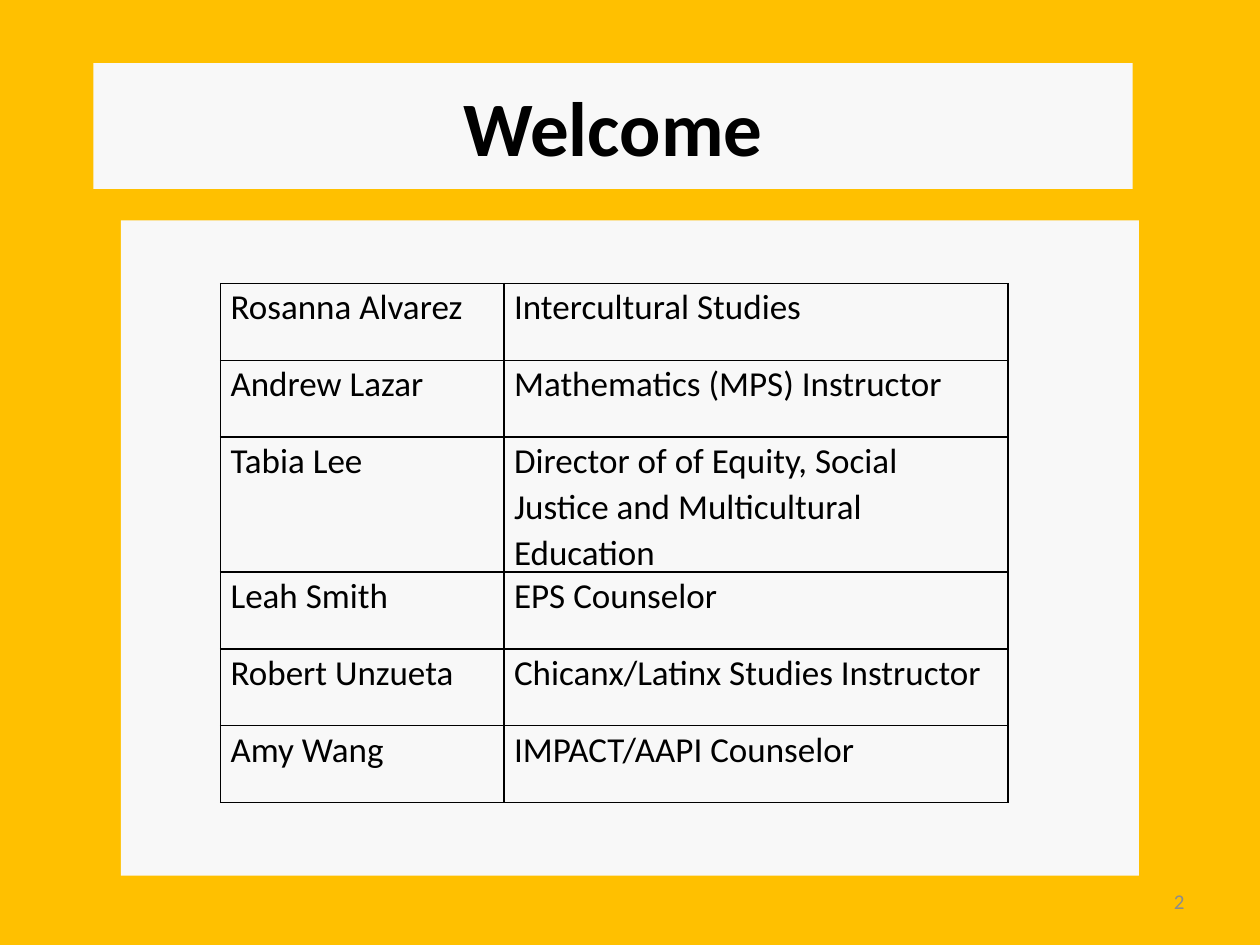
from lxml import etree
from pptx import Presentation
from pptx.dml.color import RGBColor
from pptx.enum import shapes, text
from pptx.oxml import ns
from pptx.util import Inches, Pt

THEME = {
    "font": "Calibri",
    "background": RGBColor.from_string("FFC000"),
    "panel": RGBColor.from_string("F8F8F8"),
    "ink": RGBColor.from_string("000000"),
    "muted": RGBColor.from_string("8C8C8C"),
    "title": Pt(44),
    "body": Pt(20),
    "number": Pt(12),
}


def write(frame, words, size, color="ink", align=text.PP_ALIGN.LEFT, bold=False, spacing=None):
    para = frame.paragraphs[0]
    para.alignment = align
    para.line_spacing = spacing
    span = para.add_run()
    span.text = words
    span.font.name = THEME["font"]
    span.font.size = THEME[size]
    span.font.bold = bold
    span.font.color.rgb = THEME[color]


def add_borders(cell, color, width):
    properties = cell._tc.get_or_add_tcPr()
    for position, side in enumerate(("lnL", "lnR", "lnT", "lnB")):
        line = etree.Element(ns.qn(f"a:{side}"), w=str(width))
        fill = etree.SubElement(line, ns.qn("a:solidFill"))
        etree.SubElement(fill, ns.qn("a:srgbClr"), val=str(color))
        properties.insert(position, line)


deck = Presentation()
deck.slide_width, deck.slide_height = Inches(10), Inches(7.5)
page = deck.slides.add_slide(deck.slide_layouts[5])
page.background.fill.solid()
page.background.fill.fore_color.rgb = THEME["background"]

number = page.shapes.add_textbox(Inches(7.17), Inches(6.95), Inches(2.33), Inches(0.4))
number.text_frame.word_wrap = True
number.text_frame.vertical_anchor = text.MSO_ANCHOR.MIDDLE
write(number.text_frame, "2", "number", color="muted", align=text.PP_ALIGN.RIGHT)

panel = page.shapes.add_shape(
    shapes.MSO_SHAPE.RECTANGLE, Inches(0.96), Inches(1.75), Inches(8.08), Inches(5.2))
panel.shadow.inherit = False
panel.fill.solid()
panel.fill.fore_color.rgb = THEME["panel"]
panel.line.fill.background()

title = page.shapes.title
title.left, title.top, title.width, title.height = Inches(0.74), Inches(0.5), Inches(8.25), Inches(1)
title.fill.solid()
title.fill.fore_color.rgb = THEME["panel"]
title.text_frame.vertical_anchor = text.MSO_ANCHOR.MIDDLE
write(title.text_frame, "Welcome", "title", align=text.PP_ALIGN.CENTER, bold=True)

people = [
    ("Rosanna Alvarez", "Intercultural Studies"),
    ("Andrew Lazar", "Mathematics (MPS) Instructor"),
    ("Tabia Lee", "Director of of Equity, Social Justice and Multicultural Education"),
    ("Leah Smith", "EPS Counselor"),
    ("Robert Unzueta", "Chicanx/Latinx Studies Instructor"),
    ("Amy Wang", "IMPACT/AAPI Counselor"),
]
row_heights = [0.61, 0.61, 0.63, 0.61, 0.61, 0.61]
table = page.shapes.add_table(
    len(people), 2, Inches(1.75), Inches(2.25), Inches(6.25), Inches(sum(row_heights))).table
table.first_row = False
table.horz_banding = False
for column, width in zip(table.columns, (2.25, 4)):
    column.width = Inches(width)
for row, height, person in zip(table.rows, row_heights, people):
    row.height = Inches(height)
    for cell, words in zip(row.cells, person):
        cell.margin_left = cell.margin_right = Inches(0.08)
        cell.margin_top = cell.margin_bottom = 0
        cell.fill.background()
        add_borders(cell, THEME["ink"], Pt(1))
        write(cell.text_frame, words, "body", spacing=1.07)

deck.save("out.pptx")
